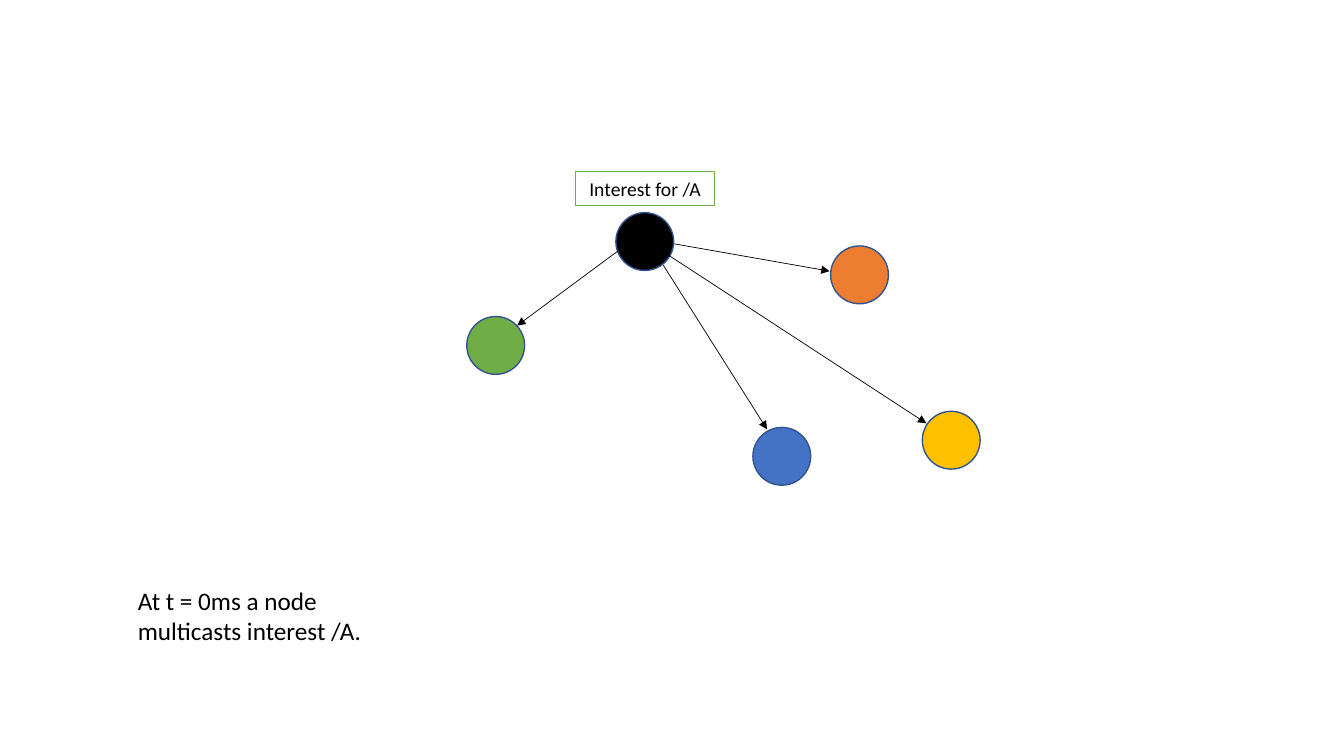
"""Build the slide showing a node that multicasts an interest to four others."""
from lxml.etree import SubElement
from pptx import Presentation
from pptx.dml.color import RGBColor
from pptx.enum.shapes import MSO_CONNECTOR as Link, MSO_SHAPE as Shape
from pptx.enum.text import MSO_ANCHOR as Anchor, PP_ALIGN as Align
from pptx.oxml.ns import qn
from pptx.util import Pt

BLACK = RGBColor(0x00, 0x00, 0x00)
WHITE = RGBColor(0xFF, 0xFF, 0xFF)
GREEN = RGBColor(0x70, 0xAD, 0x47)
GOLD = RGBColor(0xFF, 0xC0, 0x00)
ORANGE = RGBColor(0xED, 0x7D, 0x31)
BLUE = RGBColor(0x44, 0x72, 0xC4)
NAVY = RGBColor(0x32, 0x54, 0x91)
SIZE = 41.3


def add_box(kind, box, fill, edge):
    item = shapes.add_shape(kind, *map(Pt, box))
    item.shadow.inherit = False
    item.fill.solid()
    item.fill.fore_color.rgb = fill
    item.line.color.rgb = edge
    item.line.width = Pt(1)
    return item


def set_text(frame, text, size):
    frame.word_wrap = True
    para = frame.paragraphs[0]
    para.text = text
    para.font.name = "Calibri"
    para.font.size = Pt(size)
    para.font.color.rgb = BLACK
    return para


deck = Presentation()
deck.slide_width, deck.slide_height = Pt(960), Pt(540)
shapes = deck.slides.add_slide(deck.slide_layouts[6]).shapes

nodes = [
    (333.4, 226.1, GREEN),
    (658.8, 293.8, GOLD),
    (439.9, 151.9, BLACK),
    (593.3, 175.7, ORANGE),
    (537.8, 305.3, BLUE),
]
for left, top, color in nodes:
    add_box(Shape.OVAL, (left, top, SIZE, SIZE), color, NAVY)

arrows = [
    (441.4, 179.3, 369.4, 232.6),
    (473.8, 189.4, 547.9, 306.7),
    (481.7, 174.2, 592.6, 193.7),
    (477.4, 182.2, 661.7, 302.4),
]
for ends in arrows:
    arrow = shapes.add_connector(Link.STRAIGHT, *map(Pt, ends))
    arrow.line.color.rgb = BLACK
    arrow.line.width = Pt(0.5)
    SubElement(arrow.line._get_or_add_ln(), qn("a:tailEnd"), type="triangle")
    SubElement(arrow._element.spPr, qn("a:effectLst"))

label = add_box(Shape.RECTANGLE, (411.1, 122.4, 99.4, 24.3), WHITE, GREEN)
label.text_frame.vertical_anchor = Anchor.MIDDLE
set_text(label.text_frame, "Interest for /A", 14).alignment = Align.CENTER

note = shapes.add_textbox(Pt(91.4), Pt(414.7), Pt(216), Pt(51))
set_text(note.text_frame, "At t = 0ms a node multicasts interest /A.", 18)

deck.save("out.pptx")
